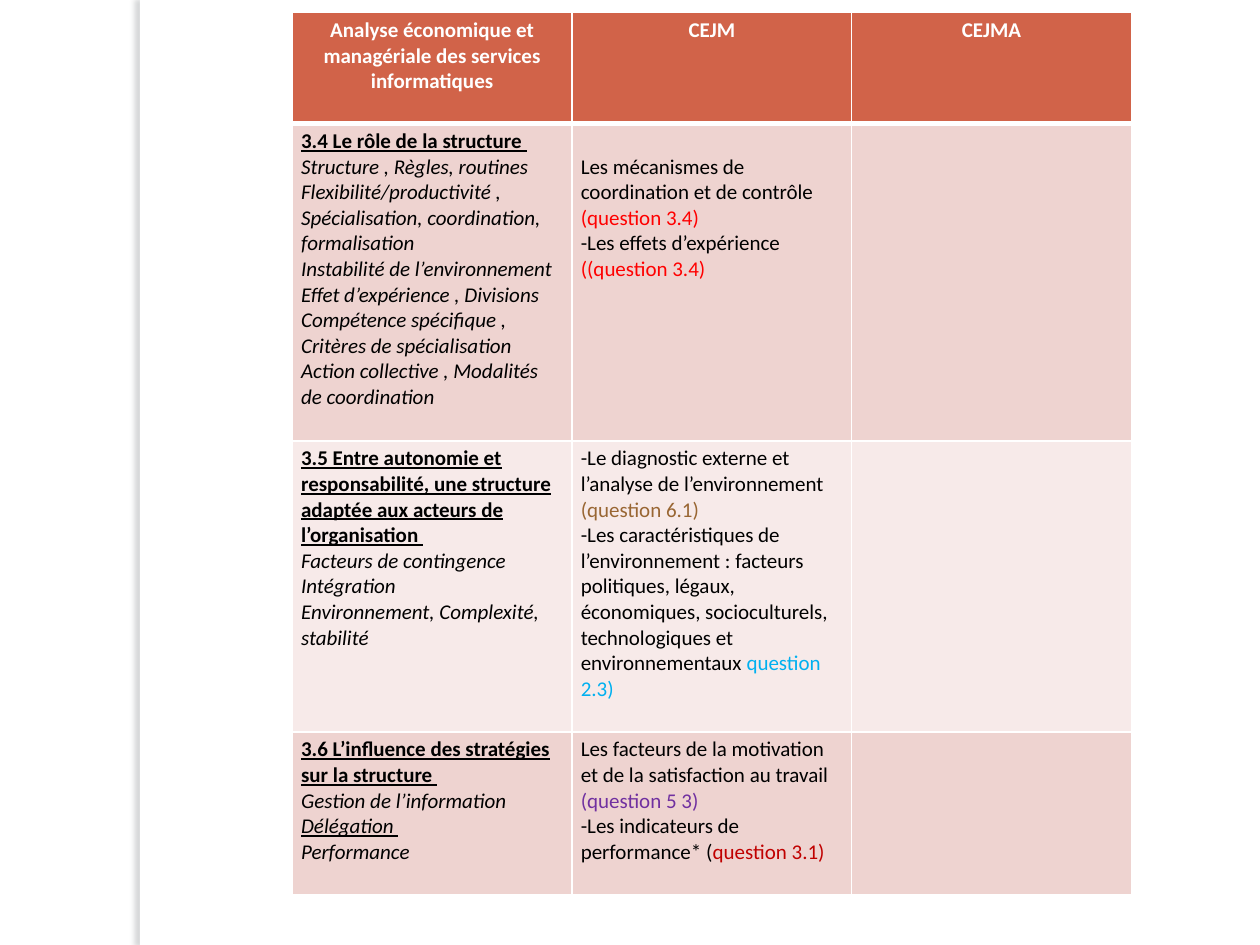
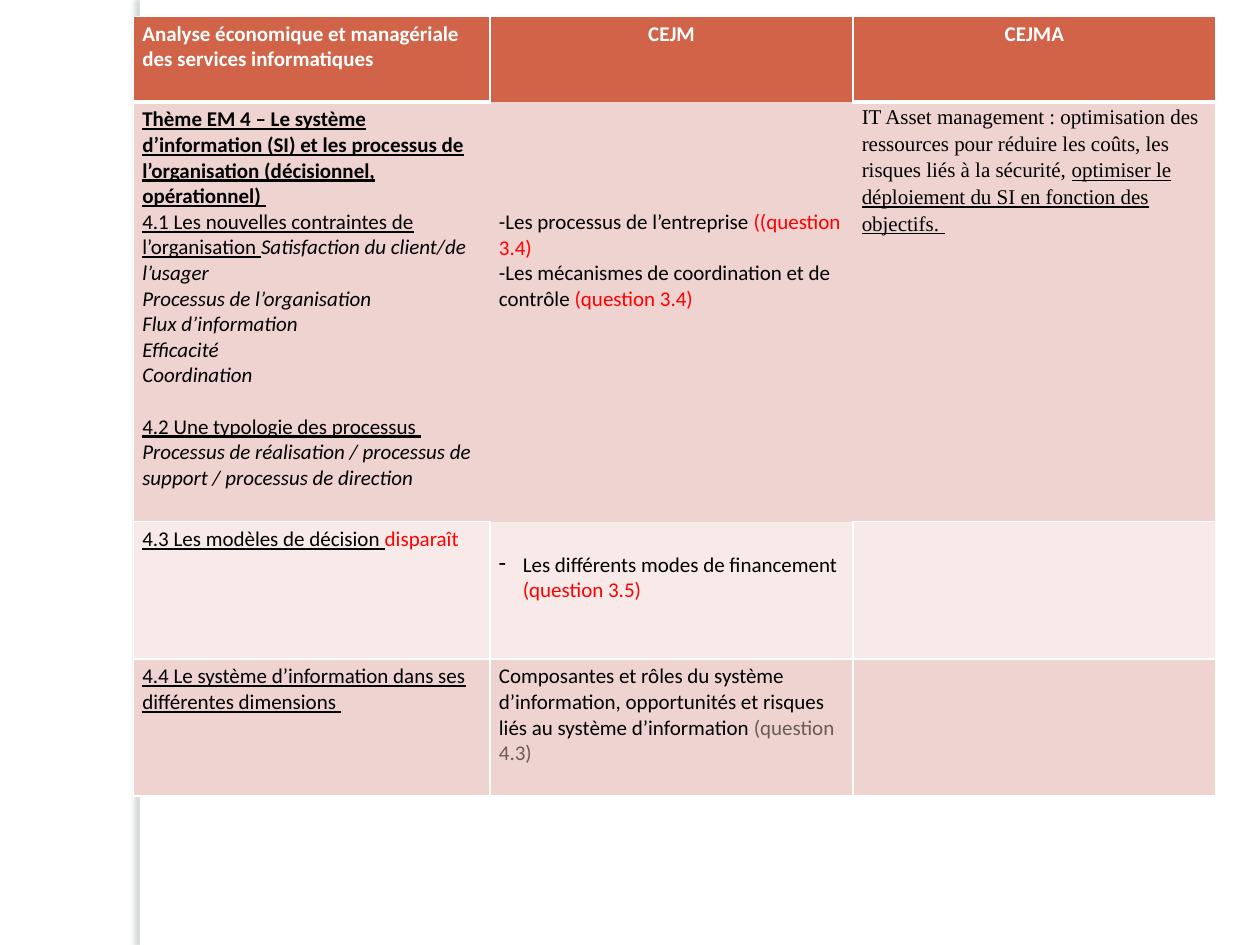
from dataclasses import dataclass

import lxml.etree
import pptx
import pptx.dml.color
import pptx.enum.shapes
import pptx.enum.text
import pptx.oxml
import pptx.oxml.ns
import pptx.util

Inches = pptx.util.Inches
Pt = pptx.util.Pt
ALIGN = pptx.enum.text.PP_ALIGN


@dataclass(frozen=True)
class Theme:
    header: str = "D16349"
    bands: tuple = ("EED3D0", "F7EAE9")
    white: str = "FFFFFF"
    ink: str = "000000"
    shadow: str = "61686B"
    red: str = "FF0000"
    brown: str = "996633"
    blue: str = "00B0F0"
    purple: str = "7030A0"
    dark_red: str = "C00000"
    grey: str = "695C54"
    font: str = "Calibri"
    serif: str = "Times New Roman"
    size: float = 12
    line: float = 14.65
    rule: float = 1
    header_rule: float = 3


THEME = Theme()


@dataclass(frozen=True)
class Paragraph:
    runs: tuple
    align: object = ALIGN.LEFT
    before: float = 0
    after: float = 0
    spacing: float = None
    dash: bool = False


@dataclass(frozen=True)
class Entry:
    paragraphs: tuple = ()
    skip: int = 0
    font: str = THEME.font
    inset: float = 0.04


def para(*runs, **layout):
    return Paragraph(runs, **layout)


def entry(*paragraphs, **layout):
    return Entry(paragraphs, **layout)


def run(text, marks="", color=THEME.ink):
    return text, marks, color


def topic(title, *notions):
    return entry(para(run(title, "bu")), *(para(run(notion, "i")) for notion in notions))


def heading(text, align=ALIGN.CENTER):
    return entry(para(run(text, "b", THEME.white), align=align))


class Deck:
    """Holds the theme and the current slide, and draws each kind of element."""

    def __init__(self, theme):
        self.theme = theme
        self.presentation = pptx.Presentation()
        self.presentation.slide_width = Inches(10)
        self.presentation.slide_height = Inches(7.5)
        self.slide = None

    def new_slide(self):
        self.slide = self.presentation.slides.add_slide(self.presentation.slide_layouts[6])
        self.side_band()

    def side_band(self):
        band = self.slide.shapes.add_shape(
            pptx.enum.shapes.MSO_SHAPE.RECTANGLE,
            Inches(1.11), 0, Inches(0.08), Inches(7.5))
        band.fill.solid()
        band.fill.fore_color.rgb = self.rgb(self.theme.white)
        band.line.fill.background()
        band.shadow.inherit = False
        effects = band._element.spPr.find(pptx.oxml.ns.qn("a:effectLst"))
        effects.append(pptx.oxml.parse_xml(
            f'<a:outerShdw {pptx.oxml.ns.nsdecls("a")} blurRad="{Pt(3)}" dist="{Pt(3)}" '
            f'dir="10800000" algn="tl" rotWithShape="0"><a:srgbClr val="{self.theme.shadow}">'
            '<a:alpha val="25000"/></a:srgbClr></a:outerShdw>'))

    def table(self, left, top, widths, heights, rows, open_sides=None):
        open_sides = open_sides or {}
        grid = self.slide.shapes.add_table(
            len(rows), len(widths), Inches(left), Inches(top),
            Inches(sum(widths)), Inches(sum(heights))).table
        for column, width in zip(grid.columns, widths):
            column.width = Inches(width)
        for r, (height, entries) in enumerate(zip(heights, rows)):
            grid.rows[r].height = Inches(height)
            fill = self.theme.bands[(r - 1) % 2] if r else self.theme.header
            for c, content in enumerate(entries):
                cell = grid.cell(r, c)
                cell.fill.solid()
                cell.fill.fore_color.rgb = self.rgb(fill)
                self.borders(cell, r == 0, open_sides.get((r, c), ""))
                self.fill_cell(cell, content)

    def borders(self, cell, is_header, open_sides):
        properties = cell._tc.get_or_add_tcPr()
        for position, side in enumerate("LRTB"):
            width = self.theme.header_rule if is_header and side == "B" else self.theme.rule
            paint = ("<a:noFill/>" if side in open_sides else
                     f'<a:solidFill><a:srgbClr val="{self.theme.white}"/></a:solidFill>')
            properties.insert(position, pptx.oxml.parse_xml(
                f'<a:ln{side} {pptx.oxml.ns.nsdecls("a")} w="{Pt(width)}">{paint}</a:ln{side}>'))

    def fill_cell(self, cell, content):
        cell.margin_left = cell.margin_right = Inches(0.07)
        cell.margin_top = Inches(content.inset) + content.skip * Pt(self.theme.line)
        cell.margin_bottom = Inches(content.inset)
        frame = cell.text_frame
        for index, paragraph in enumerate(content.paragraphs):
            target = frame.add_paragraph() if index else frame.paragraphs[0]
            target.alignment = paragraph.align
            target.space_before = Pt(paragraph.before)
            target.space_after = Pt(paragraph.after)
            if paragraph.spacing:
                target.line_spacing = paragraph.spacing
            if paragraph.dash:
                self.dash(target)
            for text, marks, color in paragraph.runs:
                self.add_run(target, text, marks, color, content.font)

    def add_run(self, target, text, marks, color, face):
        piece = target.add_run()
        piece.text = text
        font = piece.font
        font.name = face
        font.size = Pt(self.theme.size)
        font.bold = "b" in marks
        font.italic = "i" in marks
        font.underline = "u" in marks
        font.color.rgb = self.rgb(color)

    def dash(self, target):
        properties = target._p.get_or_add_pPr()
        properties.set("marL", str(Inches(0.19)))
        properties.set("indent", str(-Inches(0.19)))
        bullet = lxml.etree.SubElement(properties, pptx.oxml.ns.qn("a:buChar"))
        bullet.set("char", "-")

    @staticmethod
    def rgb(color):
        return pptx.dml.color.RGBColor.from_string(color)


SUBJECT = "Analyse économique et managériale des services informatiques"


def structure_slide(deck):
    deck.new_slide()
    deck.table(2.32, 0.1, [2.22] * 3, [0.88, 2.52, 2.31, 1.29], [
        [heading(SUBJECT), heading("CEJM"), heading("CEJMA")],
        [topic("3.4 Le rôle de la structure ",
               "Structure , Règles, routines",
               "Flexibilité/productivité , Spécialisation, coordination, formalisation",
               "Instabilité de l’environnement",
               "Effet d’expérience , Divisions",
               "Compétence spécifique , Critères de spécialisation",
               "Action collective , Modalités de coordination"),
         entry(para(run("Les mécanismes de coordination et de contrôle "),
                    run("(question 3.4)", color=THEME.red)),
               para(run("-Les effets d’expérience "),
                    run("((question 3.4)", color=THEME.red)), skip=1),
         entry()],
        [topic("3.5 Entre autonomie et responsabilité, une structure adaptée "
               "aux acteurs de l’organisation ",
               "Facteurs de contingence", "Intégration",
               "Environnement, Complexité, stabilité"),
         entry(para(run("-Le diagnostic externe et l’analyse de l’environnement "),
                    run("(question 6.1)", color=THEME.brown)),
               para(run("-Les caractéristiques de l’environnement : facteurs politiques, "
                        "légaux, économiques, socioculturels, technologiques et "
                        "environnementaux "),
                    run("question 2.3)", color=THEME.blue))),
         entry()],
        [entry(para(run("3.6 L’influence des stratégies sur la structure ", "bu")),
               para(run("Gestion de l’information", "i")),
               para(run("Délégation ", "iu")),
               para(run("Performance", "i"))),
         entry(para(run("Les facteurs de la motivation et de la satisfaction au travail "),
                    run("(question 5 3)", color=THEME.purple)),
               para(run("-Les indicateurs de performance* ("),
                    run("question 3.1)", color=THEME.dark_red))),
         entry()],
    ])


def information_system_slide(deck):
    deck.new_slide()
    deck.table(1.06, 0.13, [2.83, 2.88, 2.88], [0.68, 3.33, 1.09, 1.09], [
        [heading(SUBJECT, ALIGN.LEFT), heading("CEJM"), heading("CEJMA")],
        [entry(para(run("Thème EM 4 – Le système d’information (SI) et les processus de "
                        "l’organisation (décisionnel, opérationnel) ", "bu")),
               para(run("4.1 Les nouvelles contraintes de l’organisation ", "u"),
                    run("Satisfaction du client/de l’usager", "i")),
               *(para(run(notion, "i")) for notion in (
                   "Processus de l’organisation", "Flux d’information",
                   "Efficacité", "Coordination")),
               para(run("4.2 Une typologie des processus ", "u"), before=THEME.line),
               para(run("Processus de réalisation / processus de support / "
                        "processus de direction", "i"))),
         entry(para(run("-Les processus de l’entreprise "),
                    run("((question 3.4)", color=THEME.red)),
               para(run("-Les mécanismes de coordination et de contrôle "),
                    run("(question 3.4)", color=THEME.red)), skip=4),
         entry(para(run("IT Asset management : optimisation des ressources pour réduire "
                        "les coûts, les risques liés à la sécurité, "),
                    run("optimiser le déploiement du SI en fonction des objectifs. ", "u"),
                    spacing=1.15, after=10), font=THEME.serif, inset=0)],
        [entry(para(run("4.3 Les modèles de décision ", "u"),
                    run("disparaît", color=THEME.red))),
         entry(para(run("Les différents modes de financement "),
                    run("(question 3.5)", color=THEME.red), dash=True), skip=1),
         entry()],
        [entry(para(run("4.4 Le système d’information dans ses différentes dimensions ", "u"))),
         entry(para(run("Composantes et rôles du système d’information, opportunités et "
                        "risques liés au système d’information "),
                    run("(question 4.3)", color=THEME.grey))),
         entry()],
    ], open_sides={(0, 1): "B", (1, 0): "R", (1, 1): "LRTB", (1, 2): "L", (2, 1): "T"})


def main():
    deck = Deck(THEME)
    structure_slide(deck)
    information_system_slide(deck)
    deck.presentation.save("out.pptx")


if __name__ == "__main__":
    main()
